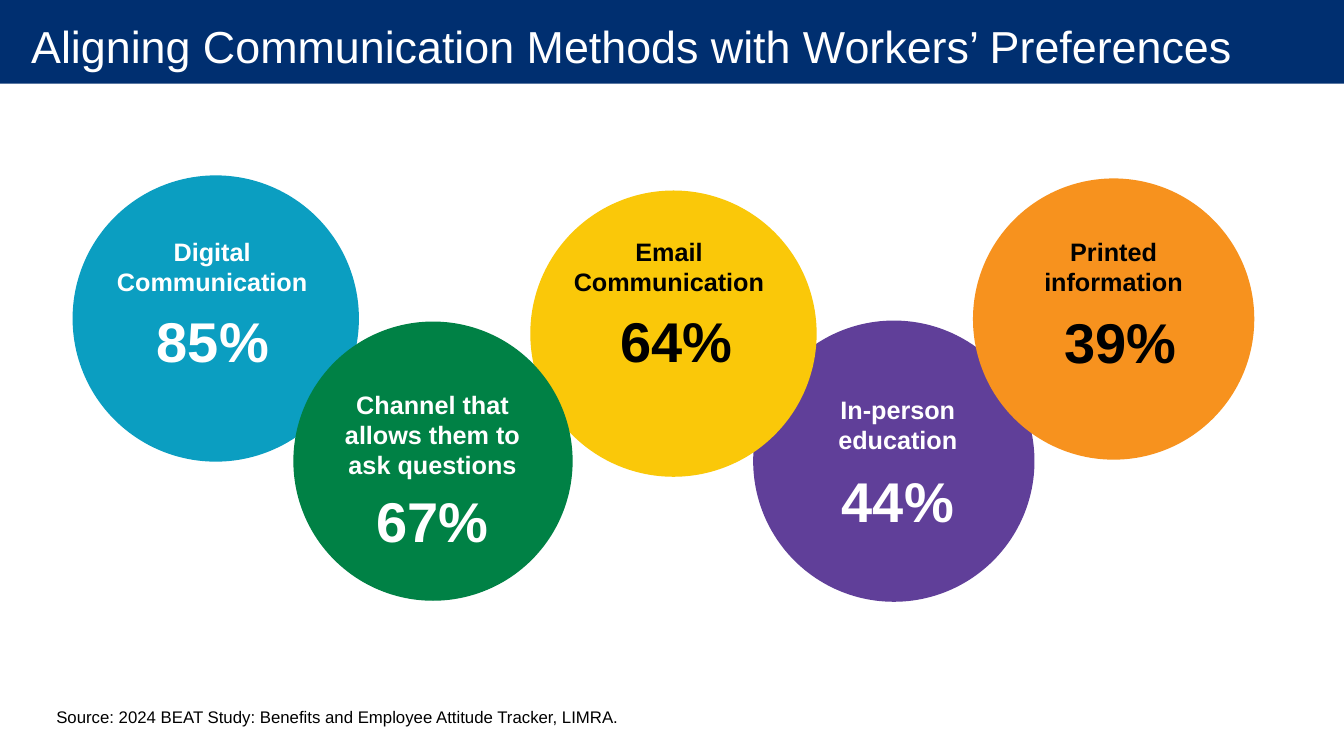
from pptx import Presentation
from pptx.dml.color import RGBColor
from pptx.enum.shapes import MSO_SHAPE
from pptx.enum.text import MSO_ANCHOR, PP_ALIGN
from pptx.util import Inches, Pt

RECTANGLE = MSO_SHAPE.RECTANGLE
OVAL = MSO_SHAPE.OVAL
TOP = MSO_ANCHOR.TOP
MIDDLE = MSO_ANCHOR.MIDDLE
BOTTOM = MSO_ANCHOR.BOTTOM
LEFT = PP_ALIGN.LEFT
CENTER = PP_ALIGN.CENTER

NAVY = RGBColor(0x00, 0x2F, 0x70)
BLUE = RGBColor(0x0B, 0x9E, 0xC1)
PURPLE = RGBColor(0x60, 0x3F, 0x99)
YELLOW = RGBColor(0xFA, 0xC8, 0x09)
GREEN = RGBColor(0x00, 0x81, 0x45)
ORANGE = RGBColor(0xF7, 0x92, 0x1E)
WHITE = RGBColor(0xFF, 0xFF, 0xFF)
BLACK = RGBColor(0x00, 0x00, 0x00)

FONT = "Arial"
SLIDE_WIDTH = 13.33

# circle (left, top, diameter), fill, text colour, label and its box, share and its box
METHODS = [
    ((0.72, 1.74, 2.84), BLUE, WHITE,
     "Digital Communication", (0.87, 2.29, 2.47, 0.71),
     "85%", (1.45, 2.99, 1.32, 0.77)),
    ((7.47, 3.18, 2.79), PURPLE, WHITE,
     "In-person education", (7.87, 3.86, 2.07, 0.71),
     "44%", (8.23, 4.58, 1.35, 0.77)),
    ((5.26, 1.89, 2.84), YELLOW, BLACK,
     "Email\nCommunication", (5.58, 2.29, 2.11, 0.71),
     "64%", (5.71, 2.99, 1.99, 0.77)),
    ((2.91, 3.19, 2.77), GREEN, WHITE,
     "Channel that allows them to ask questions", (3.14, 3.81, 2.3, 1.01),
     "67%", (3.61, 4.78, 1.36, 0.77)),
    ((9.65, 1.77, 2.79), ORANGE, BLACK,
     "Printed information", (10.01, 2.29, 2.07, 0.71),
     "39%", (10.42, 3, 1.39, 0.77)),
]


def add_filled_shape(slide, kind, box, color):
    shape = slide.shapes.add_shape(kind, *map(Inches, box))
    shape.shadow.inherit = False
    shape.fill.solid()
    shape.fill.fore_color.rgb = color
    shape.line.fill.background()


def add_text(slide, text, box, size, color, bold=False, align=LEFT, anchor=TOP):
    text_frame = slide.shapes.add_textbox(*map(Inches, box)).text_frame
    text_frame.word_wrap = True
    text_frame.vertical_anchor = anchor
    text_frame.text = text
    for paragraph in text_frame.paragraphs:
        paragraph.alignment = align
        for run in paragraph.runs:
            run.font.name = FONT
            run.font.size = Pt(size)
            run.font.bold = bold
            run.font.color.rgb = color
    return text_frame


def add_title(slide, text):
    add_filled_shape(slide, RECTANGLE, (0, -0.03, SLIDE_WIDTH, 0.86), NAVY)
    text_frame = add_text(slide, text, (0.01, -0.03, SLIDE_WIDTH, 0.97), 32, WHITE, anchor=MIDDLE)
    text_frame.word_wrap = False
    text_frame.margin_left = Inches(0.3)
    text_frame.margin_right = Inches(0.2)
    text_frame.margin_top = text_frame.margin_bottom = 0


def add_method(slide, circle, fill, color, label, label_box, share, share_box):
    left, top, diameter = circle
    add_filled_shape(slide, OVAL, (left, top, diameter, diameter), fill)
    add_text(slide, label, label_box, 18, color, bold=True, align=CENTER)
    add_text(slide, share, share_box, 40, color, bold=True, align=CENTER)


def main():
    presentation = Presentation()
    presentation.slide_width = Inches(SLIDE_WIDTH)
    presentation.slide_height = Inches(7.5)
    slide = presentation.slides.add_slide(presentation.slide_layouts[6])
    add_title(slide, "Aligning Communication Methods with Workers’ Preferences")
    add_text(slide, "Source: 2024 BEAT Study: Benefits and Employee Attitude Tracker, LIMRA.",
             (0.46, 6.54, 5.85, 0.72), 12, BLACK, anchor=BOTTOM)
    for method in METHODS:
        add_method(slide, *method)
    presentation.save("out.pptx")


if __name__ == "__main__":
    main()
